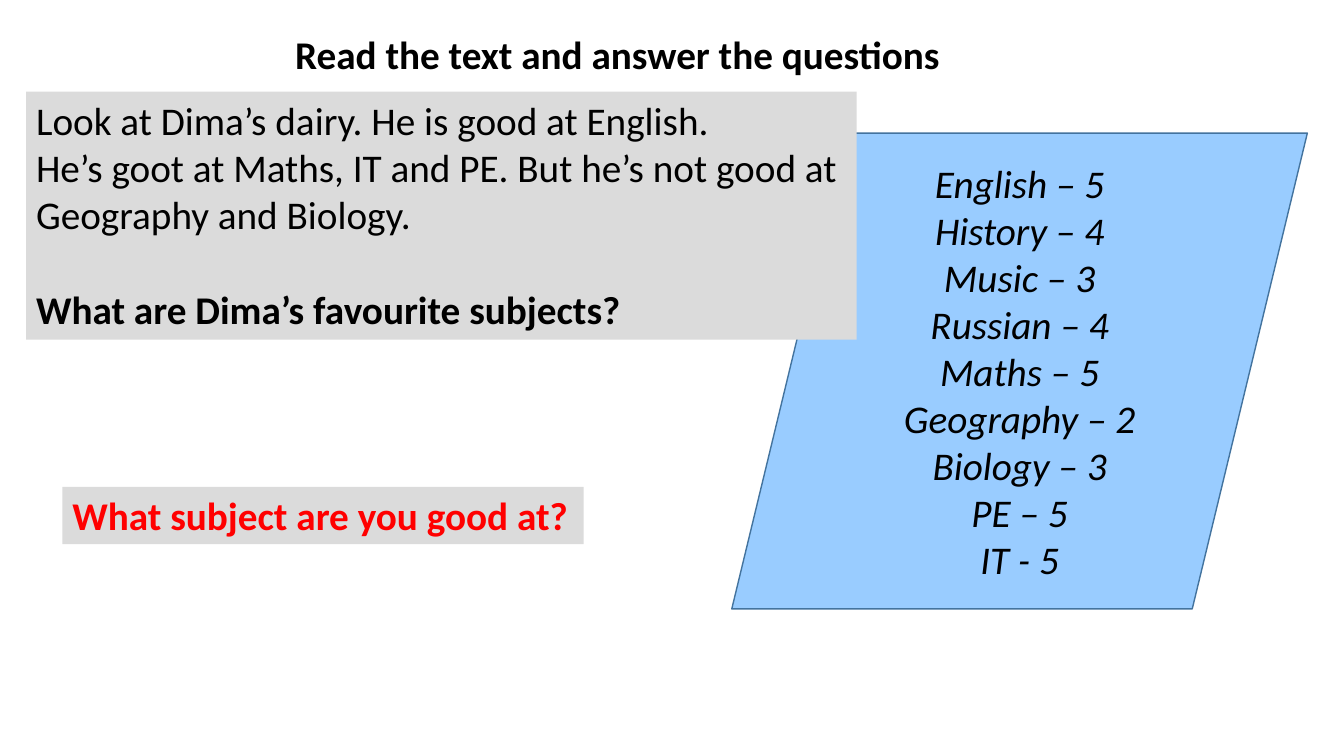
import pptx
import pptx.util
import pptx.dml.color
import pptx.enum.shapes
import pptx.enum.text

SHAPES = pptx.enum.shapes.MSO_SHAPE
ALIGN = pptx.enum.text.PP_ALIGN
ANCHOR = pptx.enum.text.MSO_ANCHOR
AUTO_SIZE = pptx.enum.text.MSO_AUTO_SIZE
LINE_HEIGHT = 34

deck = pptx.Presentation()
deck.slide_width = pptx.util.Inches(13.33)
deck.slide_height = pptx.util.Inches(7.5)
slide = deck.slides.add_slide(deck.slide_layouts[6])
column = deck.slide_width / 40
row = deck.slide_height / 30


def rgb(value):
    return pptx.dml.color.RGBColor.from_string(value)


def add_panel(preset, place, fill, lines, align=ALIGN.LEFT, color="000000", bold=False, italic=False):
    """Add a panel placed in grid columns and rows, with one paragraph per line."""
    left, top, width, height = place
    panel = slide.shapes.add_shape(
        preset, round(left * column), round(top * row), round(width * column), round(height * row))
    panel.shadow.inherit = False
    panel.line.fill.background()
    if fill:
        panel.fill.solid()
        panel.fill.fore_color.rgb = rgb(fill)
    else:
        panel.fill.background()
    frame = panel.text_frame
    frame.word_wrap = False
    frame.auto_size = AUTO_SIZE.SHAPE_TO_FIT_TEXT
    frame.vertical_anchor = ANCHOR.TOP
    for index, line in enumerate(lines):
        paragraph = frame.paragraphs[0] if index == 0 else frame.add_paragraph()
        paragraph.alignment = align
        run = paragraph.add_run()
        run.text = line
        run.font.name = "Calibri"
        run.font.size = pptx.util.Pt(28)
        run.font.bold = bold
        run.font.italic = italic
        run.font.color.rgb = rgb(color)
    return panel


add_panel(SHAPES.RECTANGLE, (8.49, 1, 20.01, 2.28), None,
          ["Read the text and answer the questions"], bold=True)

marks = add_panel(
    SHAPES.FLOWCHART_DATA, (21.78, 5.28, 17.13, 18.88), "99CCFF",
    ["English – 5", "History – 4", "Music – 3", "Russian – 4", "Maths – 5",
     "Geography – 2", "Biology – 3", "PE – 5", "IT - 5"],
    align=ALIGN.CENTER, italic=True)
marks.line.color.rgb = rgb("43739E")
marks.line.width = pptx.util.Pt(1)
marks.text_frame.word_wrap = True
marks.text_frame.auto_size = AUTO_SIZE.NONE
marks.text_frame.vertical_anchor = ANCHOR.MIDDLE

story = add_panel(
    SHAPES.RECTANGLE, (0.78, 3.64, 24.72, 9.84), "DBDBDB",
    ["Look at Dima’s dairy. He is good at English.",
     "He’s goot at Maths, IT and PE. But he’s not good at",
     "Geography and Biology.",
     "What are Dima’s favourite subjects?"])
story_question = story.text_frame.paragraphs[-1]
story_question.space_before = pptx.util.Pt(LINE_HEIGHT)
story_question.runs[0].font.bold = True

add_panel(SHAPES.RECTANGLE, (1.86, 19.32, 15.51, 2.28), "DBDBDB",
          ["What subject are you good at?"], color="FF0000", bold=True)

deck.save("out.pptx")
